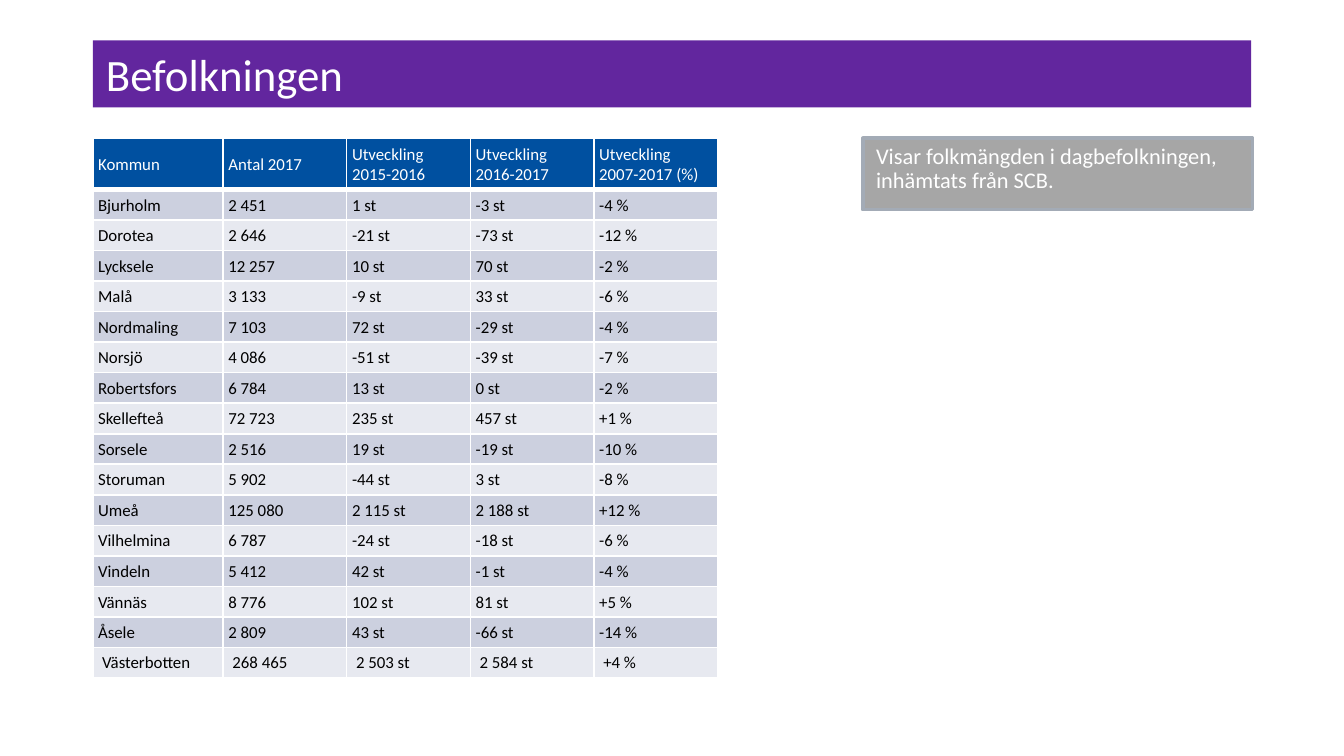
from typing import NamedTuple

from lxml import etree
from pptx import Presentation, util as u
from pptx.dml.color import RGBColor
from pptx.enum import shapes, text
from pptx.oxml import ns

WHITE = "FFFFFF"
WIDE = 10
HEAD = ("Kommun", "Antal 2017", "Utveckling 2015-2016", "Utveckling 2016-2017", "Utveckling 2007-2017 (%)")
WIDTHS = (0.97, 0.92, 0.92, 0.92, 0.92)
TOP, ROW = 0.38, 3.64 / 16


class Town(NamedTuple):
    name: str
    count: str
    last: str
    now: str
    trend: str


class Box(NamedTuple):
    words: str
    left: float
    top: float
    width: float
    height: float
    fill: str
    size: float
    edge: str = ""
    anchor: text.MSO_ANCHOR = text.MSO_ANCHOR.TOP
    space: float = 1.0


TOWNS = (
    Town("Bjurholm", "2 451", "1 st", "-3 st", "-4 %"),
    Town("Dorotea", "2 646", "-21 st", "-73 st", "-12 %"),
    Town("Lycksele", "12 257", "10 st", "70 st", "-2 %"),
    Town("Malå", "3 133", "-9 st", "33 st", "-6 %"),
    Town("Nordmaling", "7 103", "72 st", "-29 st", "-4 %"),
    Town("Norsjö", "4 086", "-51 st", "-39 st", "-7 %"),
    Town("Robertsfors", "6 784", "13 st", "0 st", "-2 %"),
    Town("Skellefteå", "72 723", "235 st", "457 st", "+1 %"),
    Town("Sorsele", "2 516", "19 st", "-19 st", "-10 %"),
    Town("Storuman", "5 902", "-44 st", "3 st", "-8 %"),
    Town("Umeå", "125 080", "2 115 st", "2 188 st", "+12 %"),
    Town("Vilhelmina", "6 787", "-24 st", "-18 st", "-6 %"),
    Town("Vindeln", "5 412", "42 st", "-1 st", "-4 %"),
    Town("Vännäs", "8 776", "102 st", "81 st", "+5 %"),
    Town("Åsele", "2 809", "43 st", "-66 st", "-14 %"),
    Town("Västerbotten", "268 465", "2 503 st", "2 584 st", "+4 %"),
)
BOXES = (
    Box("Befolkningen", 0.69, 0.3, 8.62, 0.5, "62269E", 24, anchor=text.MSO_ANCHOR.MIDDLE),
    Box("Visar folkmängden i dagbefolkningen, inhämtats från SCB.",
        6.42, 1.03, 2.9, 0.53, "A6A6A6", 12, edge="A3ABB6", space=0.9),
)


def paint(form, tone: str) -> None:
    form.solid()
    form.fore_color.rgb = RGBColor.from_string(tone)


def put(frame, words: str, *, size: float, tone: str = WHITE, space: float = 1.0) -> None:
    frame.word_wrap = True
    para = frame.paragraphs[0]
    para.alignment = text.PP_ALIGN.LEFT
    para.line_spacing = space
    run = para.add_run()
    run.text = words
    run.font.name = "Calibri"
    run.font.size = u.Pt(size)
    paint(run.font.fill, tone)


def draw_box(slide, box: Box) -> None:
    area = map(u.Inches, (box.left, box.top, box.width, box.height))
    shape = slide.shapes.add_shape(shapes.MSO_SHAPE.RECTANGLE, *area)
    shape.shadow.inherit = False
    paint(shape.fill, box.fill)
    if box.edge:
        paint(shape.line.fill, box.edge)
        shape.line.width = u.Pt(2)
    else:
        shape.line.fill.background()
    shape.text_frame.vertical_anchor = box.anchor
    put(shape.text_frame, box.words, size=box.size, space=box.space)


def edge_cell(cell, base: float) -> None:
    props = cell._tc.get_or_add_tcPr()
    for spot, (side, width) in enumerate((("lnL", 1), ("lnR", 1), ("lnT", 1), ("lnB", base))):
        line = etree.Element(ns.qn(f"a:{side}"), w=str(u.Pt(width)))
        fill = etree.SubElement(line, ns.qn("a:solidFill"))
        etree.SubElement(fill, ns.qn("a:srgbClr"), val=WHITE)
        props.insert(spot, line)


def draw_cell(cell, words: str, *, fill: str, tone: str, base: float, last: bool) -> None:
    cell.margin_left = cell.margin_right = u.Inches(0.07 if last else 0.04)
    cell.margin_top, cell.margin_bottom = u.Inches(0.04), u.Inches(0.03)
    cell.vertical_anchor = text.MSO_ANCHOR.TOP if last else text.MSO_ANCHOR.MIDDLE
    paint(cell.fill, fill)
    edge_cell(cell, base)
    put(cell.text_frame, words, size=9, tone=tone)


def draw_table(slide) -> None:
    rows = (HEAD, *TOWNS)
    area = map(u.Inches, (0.69, 1.03, sum(WIDTHS), TOP + ROW * len(TOWNS)))
    table = slide.shapes.add_table(len(rows), len(HEAD), *area).table
    for col, width in zip(table.columns, WIDTHS):
        col.width = u.Inches(width)
    for i, row in enumerate(rows):
        head = i == 0
        table.rows[i].height = u.Inches(TOP if head else ROW)
        fill = "0050A0" if head else "CCD0DF" if i % 2 else "E7E9F0"
        for j, words in enumerate(row):
            draw_cell(table.cell(i, j), words, fill=fill, tone=WHITE if head else "000000",
                      base=3 if head else 1, last=i == len(TOWNS))


def main() -> None:
    """Build the population slide."""
    deck = Presentation()
    deck.slide_width, deck.slide_height = u.Inches(WIDE), u.Inches(WIDE * 9 / 16)
    slide = deck.slides.add_slide(deck.slide_layouts[6])
    draw_table(slide)
    for box in BOXES:
        draw_box(slide, box)
    deck.save("out.pptx")


if __name__ == "__main__":
    main()
